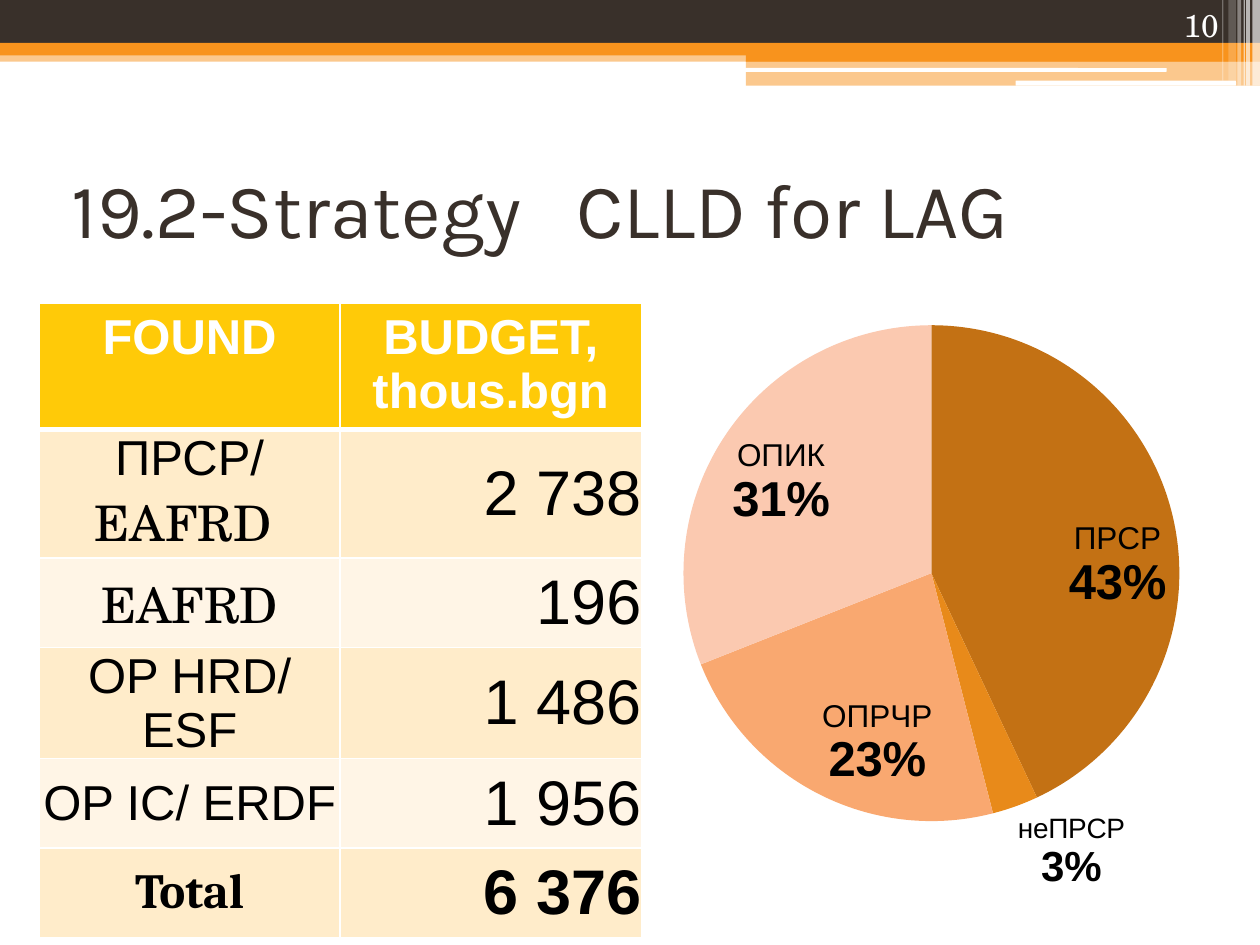
from lxml.etree import SubElement as Sub
from pptx import Presentation
from pptx.chart.data import CategoryChartData as Data
from pptx.dml.color import RGBColor as RGB
from pptx.enum.chart import XL_CHART_TYPE as Kind, XL_LABEL_POSITION as Pos
from pptx.enum.shapes import MSO_SHAPE as Shape
from pptx.enum.text import MSO_ANCHOR as Anchor, PP_ALIGN as Align
from pptx.oxml import parse_xml
from pptx.oxml.ns import nsdecls, qn
from pptx.util import Inches, Pt

HUES = {
    "white": "FFFFFF", "black": "000000", "dark": "39302A",
    "orange": "F8931D", "gold": "FFCA08", "band": "FFECCA", "pale": "FFF5E6",
}
SERIF = "TeX Gyre Schola"
SLICES = [
    ("ПРСР", 43, "C37114", 18, 28, Pos.INSIDE_END),
    ("неПРСР", 3, "E88A1A", 16, 24, Pos.OUTSIDE_END),
    ("ОПРЧР", 23, "F9A870", 18, 28, Pos.INSIDE_END),
    ("ОПИК", 31, "FBC9B0", 18, 28, Pos.INSIDE_END),
]
ROWS = [
    (1.02, [("ПРСР/ ", "Arial"), ("EAFRD ", SERIF)], "2 738"),
    (0.71, [("EAFRD", SERIF)], "196"),
    (0.88, [("OP HRD/ ESF", "Arial")], "1 486"),
    (0.71, [("ОP IC/ ERDF", "Arial")], "1 956"),
    (0.71, [("Total", "Cambria")], "6 376"),
]


def write(para, text, size=28, font="Arial", hue="black", bold=False, align=None):
    run = para.add_run()
    run.text = text
    run.font.size = Pt(size)
    run.font.name = font
    run.font.bold = bold
    run.font.color.rgb = RGB.from_string(HUES[hue])
    if align is not None:
        para.alignment = align


def bar(slide, x, y, w, h, hue, alpha=100, kind=Shape.RECTANGLE):
    shape = slide.shapes.add_shape(kind, Inches(x), Inches(y), Inches(w), Inches(h))
    shape.shadow.inherit = False
    shape.fill.solid()
    shape.fill.fore_color.rgb = RGB.from_string(HUES[hue])
    shape.line.fill.background()
    if alpha < 100:
        tint = shape._element.spPr.find(qn("a:solidFill"))[0]
        Sub(tint, qn("a:alpha"), val=str(alpha * 1000))


def header(slide, x, y, w):
    bar(slide, x, y + 0.4, w, 0.09, "orange", 50)
    bar(slide, x, y, w, 0.34, "dark")
    bar(slide, x, y + 0.34, w, 0.1, "orange")
    bar(slide, x + 5.92, y + 0.39, w - 5.92, 0.1, "orange")
    bar(slide, x + 5.92, y + 0.48, w - 5.92, 0.2, "orange", 50)
    for dx, dy, wide, high in [(5.91, 0.54, 3.35, 0.03), (8.06, 0.64, 1.75, 0.04)]:
        bar(slide, x + dx, y + dy, wide, high, "white", kind=Shape.ROUNDED_RECTANGLE)
    for dx, wide, high, alpha in [
        (9.94, 0.06, 0.68, 65), (9.89, 0.03, 0.68, 65), (9.87, 0.01, 0.68, 60),
        (9.82, 0.03, 0.68, 40), (9.75, 0.06, 0.64, 20), (9.7, 0.01, 0.64, 30),
    ]:
        bar(slide, x + dx, y, wide, high, "white", alpha)


def number(slide, x, y, w, h):
    box = slide.shapes.add_textbox(Inches(x), Inches(y), Inches(w), Inches(h))
    frame = box.text_frame
    frame.word_wrap = True
    frame.vertical_anchor = Anchor.BOTTOM
    write(frame.paragraphs[0], "10", size=18, font=SERIF, hue="white", align=Align.RIGHT)


def title(slide, x, y, w, h):
    box = slide.shapes.title
    box.left, box.top, box.width, box.height = map(Inches, (x, y, w, h))
    box.text_frame.vertical_anchor = Anchor.MIDDLE
    write(box.text_frame.paragraphs[0], "19.2-Strategy   CLLD for LAG",
          size=44, font="Karla", hue="dark", align=Align.LEFT)


def pie(slide, x, y, w, h):
    data = Data(number_format="#,##0")
    data.categories = [item[0] for item in SLICES]
    data.add_series("Series 1", [item[1] for item in SLICES])
    chart = slide.shapes.add_chart(
        Kind.PIE, Inches(x), Inches(y), Inches(w), Inches(h), data).chart
    chart.has_legend = chart.has_title = False
    chart.font.name, chart.font.size = "Arial", Pt(18)
    plot = chart.plots[0]
    plot.vary_by_categories = True
    for i, (name, share, hue, small, large, pos) in enumerate(SLICES):
        point = plot.series[0].points[i]
        point.format.fill.solid()
        point.format.fill.fore_color.rgb = RGB.from_string(hue)
        point.format.line.fill.background()
        label = point.data_label
        frame = label.text_frame
        write(frame.paragraphs[0], name, size=small)
        write(frame.add_paragraph(), f"{share}%", size=large, bold=True)
        label.position = pos
    area = chart._chartSpace.chart.plotArea
    for old in area.findall(qn("c:layout")):
        area.remove(old)
    area.insert(0, parse_xml(
        f'<c:layout {nsdecls("c")}><c:manualLayout><c:layoutTarget val="inner"/>'
        '<c:xMode val="edge"/><c:yMode val="edge"/><c:x val="0.07"/><c:y val="0.06"/>'
        '<c:w val="0.8"/><c:h val="0.82"/></c:manualLayout></c:layout>'))


def style(cell, hue, inset, low=1):
    sides = ("margin_left", "margin_top", "margin_right", "margin_bottom")
    for side, gap in zip(sides, inset):
        setattr(cell, side, Inches(gap))
    props = cell._tc.get_or_add_tcPr()
    for tag, width in [("lnL", 1), ("lnR", 1), ("lnT", 1), ("lnB", low)]:
        edge = Sub(props, qn(f"a:{tag}"), w=str(Pt(width)))
        Sub(Sub(edge, qn("a:solidFill")), qn("a:srgbClr"), val=HUES["white"])
    cell.fill.solid()
    cell.fill.fore_color.rgb = RGB.from_string(HUES[hue])


def budget(slide, x, y, w):
    tops = 1.0
    high = tops + sum(row[0] for row in ROWS)
    table = slide.shapes.add_table(
        len(ROWS) + 1, 2, Inches(x), Inches(y), Inches(w), Inches(high)).table
    table.horz_banding = False
    table.rows[0].height = Inches(tops)
    wide = (0.1, 0.05, 0.1, 0.05)
    for c, text in enumerate(["FOUND", "BUDGET, thous.bgn"]):
        table.columns[c].width = Inches(w / 2)
        cell = table.cell(0, c)
        style(cell, "gold", wide, low=3)
        write(cell.text_frame.paragraphs[0], text, hue="white", bold=True, align=Align.CENTER)
    for r, (tall, runs, sum_) in enumerate(ROWS, 1):
        table.rows[r].height = Inches(tall)
        last = r == len(ROWS)
        name, value = table.cell(r, 0), table.cell(r, 1)
        for cell, inset in [(name, wide if last else (0.01, 0.01, 0.01, 0)), (value, (0,) * 4)]:
            style(cell, "band" if r % 2 else "pale", inset, low=1)
            cell.vertical_anchor = Anchor.MIDDLE
        for text, font in runs:
            write(name.text_frame.paragraphs[0], text, font=font, bold=last, align=Align.CENTER)
        write(value.text_frame.paragraphs[0], sum_, size=36, bold=last, align=Align.RIGHT)


def main():
    deck = Presentation()
    deck.slide_width, deck.slide_height = Inches(10), Inches(7.5)
    slide = deck.slides.add_slide(deck.slide_layouts[5])
    header(slide, 0, 0, 10)
    title(slide, 0.47, 1.02, 9, 1.25)
    pie(slide, 5.08, 2.27, 4.92, 4.85)
    budget(slide, 0.31, 2.41, 4.78)
    number(slide, 8.94, 0, 0.83, 0.4)
    deck.save("out.pptx")


if __name__ == "__main__":
    main()
